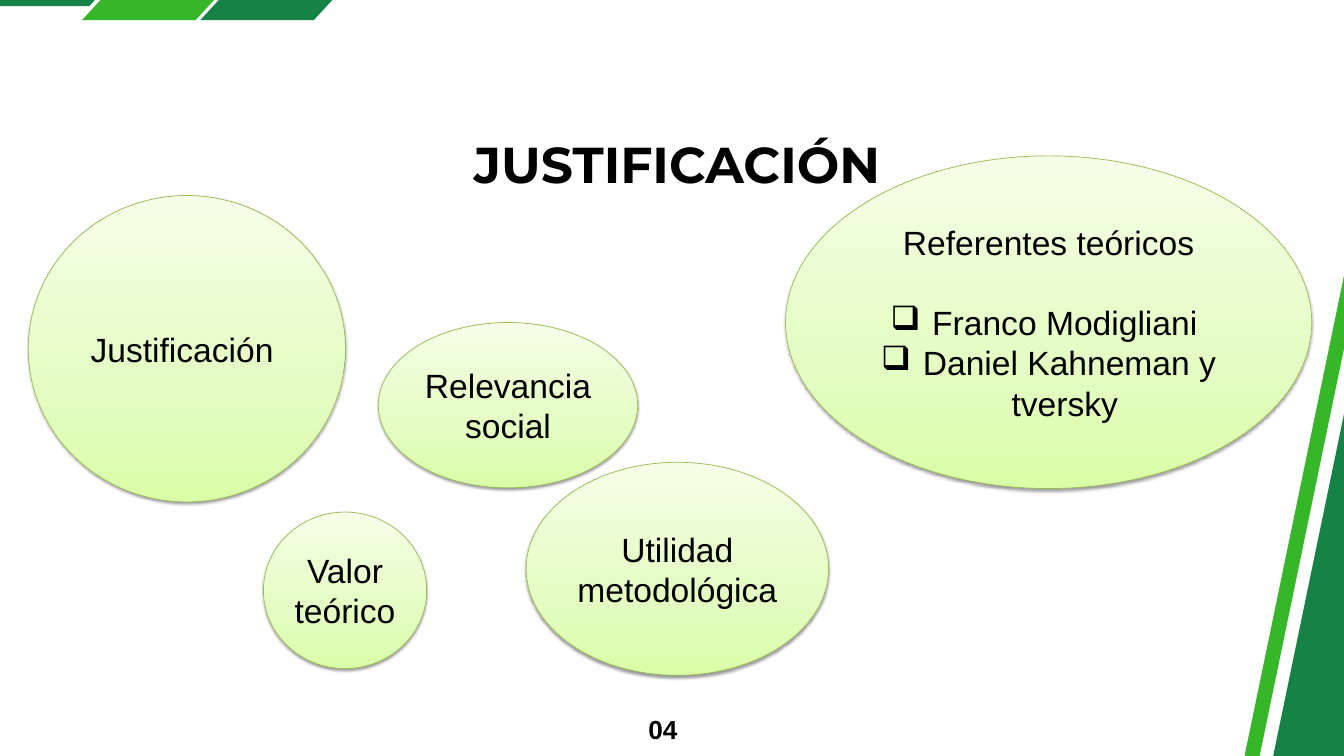
from lxml import etree
from pptx import Presentation
from pptx.dml.color import RGBColor
from pptx.enum.shapes import MSO_SHAPE
from pptx.enum.text import MSO_ANCHOR, PP_ALIGN
from pptx.oxml.ns import qn
from pptx.util import Inches, Pt

ELLIPSE = MSO_SHAPE.OVAL
TOP, MIDDLE = MSO_ANCHOR.TOP, MSO_ANCHOR.MIDDLE
CENTER, RIGHT = PP_ALIGN.CENTER, PP_ALIGN.RIGHT

BLACK = RGBColor(0x00, 0x00, 0x00)
DARK_GREEN = RGBColor(0x16, 0x82, 0x46)
BRIGHT_GREEN = RGBColor(0x35, 0xB7, 0x29)
OUTLINE_GREEN = RGBColor(0x98, 0xB9, 0x55)
GRADIENT = [  # position in percent, colour, from bottom to top
    (0, RGBColor(0xDA, 0xFD, 0xA7)),
    (35, RGBColor(0xE4, 0xFC, 0xC2)),
    (100, RGBColor(0xF5, 0xFF, 0xE7)),
]

# Content
TITLE = "JUSTIFICACIÓN"
PAGE_NUMBER = "04"
BULLET_FONT, BULLET = "Wingdings", "q"  # hollow shadowed square
BUBBLES = [  # heading, bulleted items, (left, top, width, height), right inset
    ("Justificación", [], (0.42, 2.91, 4.72, 4.56), 0.24),
    ("Valor teórico", [], (3.92, 7.62, 2.43, 2.33), 0.1),
    ("Relevancia social", [], (5.63, 4.8, 3.86, 2.46), 0.1),
    ("Utilidad metodológica", [], (7.83, 6.88, 4.5, 3.17), 0.1),
    ("Referentes teóricos", ["Franco Modigliani ", "Daniel Kahneman y tversky "],
     (11.69, 2.32, 7.83, 4.95), 0.1),
]
BANDS = [  # colour, (left, top, width, height), slant of the sides, rotation
    (DARK_GREEN, (-2.63, -0.83, 4.8, 0.92), 0.84, 0),
    (BRIGHT_GREEN, (1.22, -1.03, 2.91, 1.33), 1.22, 0),
    (DARK_GREEN, (2.98, -1.03, 2.91, 1.33), 1.22, 0),
    (DARK_GREEN, (13.86, 5.35, 16.41, 4.66), 0, 281.7),
    (BRIGHT_GREEN, (11.26, 7.12, 16.41, 0.22), 0, 281.7),
]


def place(shape, position):
    shape.left, shape.top, shape.width, shape.height = map(Inches, position)


def clear_margins(frame):
    frame.margin_left = frame.margin_right = 0
    frame.margin_top = frame.margin_bottom = 0


def write(para, text, size, font="Arial", bold=False, align=CENTER):
    para.alignment = align
    span = para.add_run()
    span.text = text
    span.font.size = Pt(size)
    span.font.name = font
    span.font.bold = bold
    span.font.color.rgb = BLACK


def add_band(page, color, position, slant, rotation):
    left, top, width, height = position
    right, bottom = left + width, top + height
    corners = [(left + slant, top), (right, top),
               (right - slant, bottom), (left, bottom)]
    points = [(Inches(x), Inches(y)) for x, y in corners]
    builder = page.shapes.build_freeform(*points[0])
    builder.add_line_segments(points[1:], close=True)
    band = builder.convert_to_shape()
    band.rotation = rotation
    band.shadow.inherit = False
    band.fill.solid()
    band.fill.fore_color.rgb = color
    band.line.fill.background()


def add_color(parent, color):
    return etree.SubElement(parent, qn("a:srgbClr"), val=str(color))


def style_bubble(bubble):
    # Three-stop gradient rising from the bottom
    bubble.fill.gradient()
    bubble.fill.gradient_angle = 90
    properties = bubble.element.spPr
    stops = properties.find(".//" + qn("a:gsLst"))
    for stop in list(stops):
        stops.remove(stop)
    for percent, color in GRADIENT:
        add_color(etree.SubElement(stops, qn("a:gs"), pos=str(percent * 1000)), color)
    bubble.line.color.rgb = OUTLINE_GREEN
    bubble.line.width = Pt(0.75)
    # Soft shadow below
    bubble.shadow.inherit = False
    shadow = etree.SubElement(
        properties.find(qn("a:effectLst")), qn("a:outerShdw"),
        blurRad=str(Pt(3.1)), dist=str(Pt(1.6)), dir="5400000", rotWithShape="0")
    etree.SubElement(add_color(shadow, BLACK), qn("a:alpha"), val="38000")


def add_bullet(para):
    properties = para._p.get_or_add_pPr()
    properties.set("marL", str(Inches(0.62)))
    properties.set("indent", str(Inches(-0.62)))
    etree.SubElement(properties, qn("a:buFont"), typeface=BULLET_FONT)
    etree.SubElement(properties, qn("a:buChar"), char=BULLET)


def add_bubble(page, heading, items, position, right_inset):
    bubble = page.shapes.add_shape(ELLIPSE, *map(Inches, position))
    style_bubble(bubble)
    frame = bubble.text_frame
    frame.word_wrap = True
    frame.vertical_anchor = MIDDLE
    frame.margin_right = Inches(right_inset)
    write(frame.paragraphs[0], heading, 36)
    for index, item in enumerate(items):
        para = frame.add_paragraph()
        add_bullet(para)
        if index == 0:
            para.space_before = Pt(43)
        write(para, item, 36)


def main():
    deck = Presentation()
    deck.slide_width, deck.slide_height = Inches(20), Inches(11.25)
    page = deck.slides.add_slide(deck.slide_layouts[5])

    # Corner and edge bands, bleeding over the slide edge
    for band in BANDS:
        add_band(page, *band)

    # Title
    title = page.shapes.title
    place(title, (6.31, 1.98, 7.53, 0.91))
    clear_margins(title.text_frame)
    title.text_frame.vertical_anchor = TOP
    write(title.text_frame.paragraphs[0], TITLE, 54, "Montserrat", True)

    # Page number
    number = page.shapes.add_textbox(*map(Inches, (9.52, 10.54, 0.56, 0.5)))
    clear_margins(number.text_frame)
    number.text_frame.word_wrap = True
    para = number.text_frame.paragraphs[0]
    para.line_spacing = Pt(39.2)
    write(para, PAGE_NUMBER, 28, bold=True, align=RIGHT)

    # Bubbles
    for bubble in BUBBLES:
        add_bubble(page, *bubble)

    deck.save("out.pptx")


if __name__ == "__main__":
    main()
